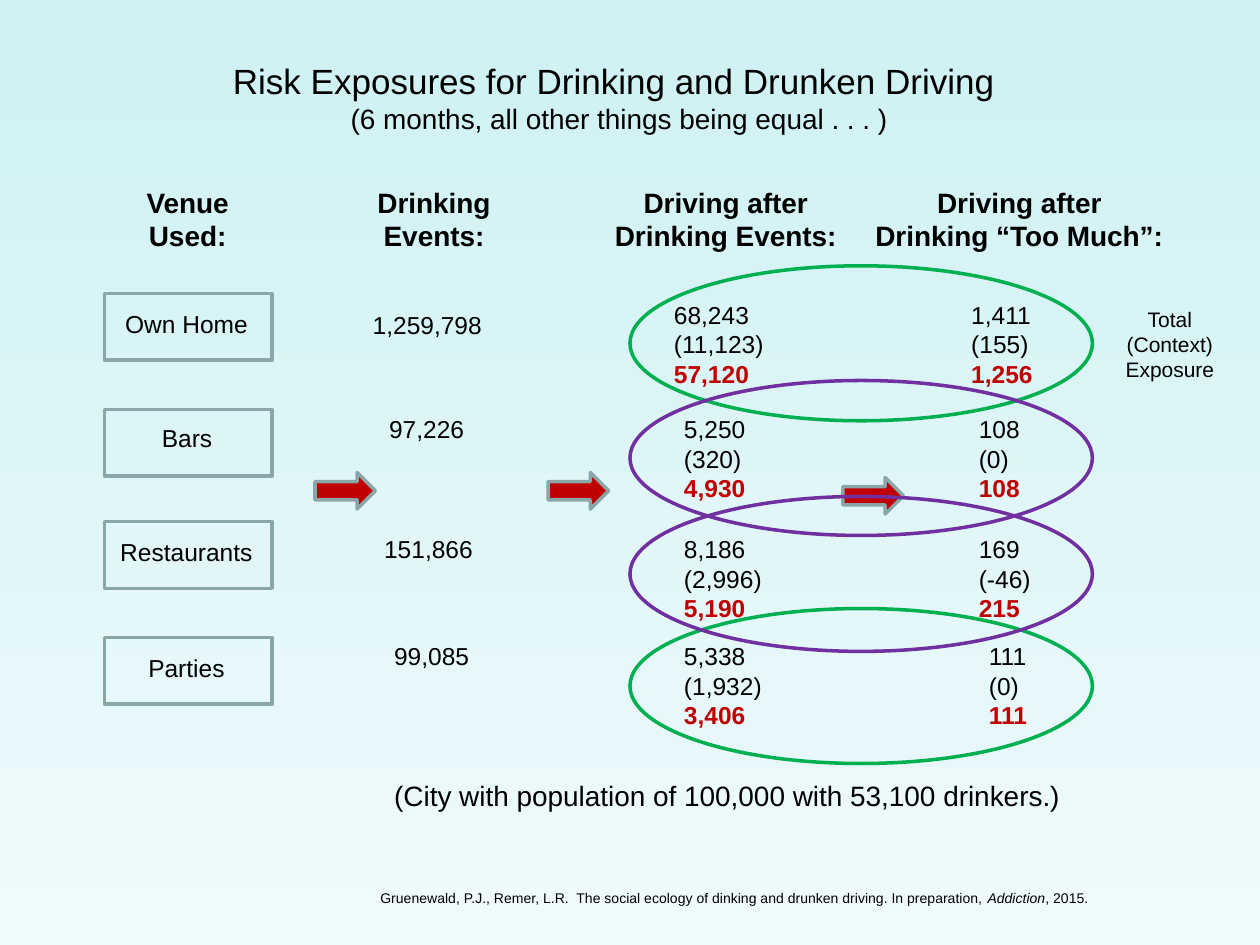
"""Build the slide on risk exposures for drinking and drunken driving."""
from pptx import Presentation
from pptx.dml.color import RGBColor
from pptx.enum.shapes import MSO_SHAPE
from pptx.enum.text import MSO_AUTO_SIZE, PP_ALIGN
from pptx.util import Inches, Pt

RECT, OVAL, ARROW = MSO_SHAPE.RECTANGLE, MSO_SHAPE.OVAL, MSO_SHAPE.RIGHT_ARROW
LEFT, CENTER = PP_ALIGN.LEFT, PP_ALIGN.CENTER
FIT = MSO_AUTO_SIZE.SHAPE_TO_FIT_TEXT
BLACK, RED, GRAY, GREEN, PURPLE = "000000", "C00000", "8AA6A8", "00B050", "7030A0"


def rgb(value):
    return RGBColor.from_string(value)


class Deck:
    def __init__(self):
        self.prs = Presentation()
        self.prs.slide_width, self.prs.slide_height = Inches(10), Inches(7.5)
        self.s = self.prs.slides.add_slide(self.prs.slide_layouts[6])
        self.style = {"name": "Arial", "size": Pt(14), "bold": False, "italic": False}

    def background(self, top, bottom):
        fill = self.s.background.fill
        fill.gradient()
        fill.gradient_angle = 270
        for stop, color in zip(fill.gradient_stops, (top, bottom)):
            stop.color.rgb = rgb(color)

    def run(self, p, text, color=BLACK, **fmt):
        r = p.add_run()
        r.text = text
        r.font.color.rgb = rgb(color)
        for key, value in {**self.style, **fmt}.items():
            setattr(r.font, key, value)

    def text(self, at, paragraphs, align=LEFT, wrap=False, spacing=None, **fmt):
        tf = self.s.shapes.add_textbox(*map(Inches, at)).text_frame
        tf.word_wrap, tf.auto_size = wrap, FIT
        for i, runs in enumerate(paragraphs):
            p = tf.add_paragraph() if i else tf.paragraphs[0]
            p.alignment, p.line_spacing = align, spacing
            for text, extra in [(runs, {})] if isinstance(runs, str) else runs:
                self.run(p, text, **{**fmt, **extra})
        return tf

    def shape(self, kind, at, line, fill=None):
        sp = self.s.shapes.add_shape(kind, *map(Inches, at))
        sp.shadow.inherit = False
        sp.line.color.rgb, sp.line.width = rgb(line), Pt(2)
        if fill:
            sp.fill.solid()
            sp.fill.fore_color.rgb = rgb(fill)
        else:
            sp.fill.background()


def main():
    deck = Deck()
    deck.background("CEF1F4", "EFFAFB")

    title = deck.text((1.75, 0.42, 6.33, 0.71), [
        [("Risk Exposures for Drinking and Drunken Driving", {"size": Pt(20)})],
        "(6 months, all other things being equal . . . )"], wrap=True, size=Pt(16))
    title.paragraphs[1].alignment = CENTER

    headings = [(1.06, 0.86, "Venue", "Used:"),
                (2.89, 1.11, "Drinking", "Events:"),
                (4.77, 1.98, "Driving after", "Drinking Events:"),
                (6.83, 2.52, "Driving after", "Drinking “Too Much”:")]
    for x, w, *lines in headings:
        deck.text((x, 1.42, w, 0.64), lines, CENTER, size=Pt(16), bold=True)

    venues = [("Own Home", 2.33, 0.89, 2.43, 1.18), ("Bars", 3.25, 1.18, 3.33, 0.61),
              ("Restaurants", 4.14, 0.85, 4.24, 1.26), ("Parties", 5.06, 1.07, 5.16, 0.82)]
    for name, box_y, x, y, w in venues:
        deck.shape(RECT, (0.83, box_y, 1.33, 0.53), GRAY)
        deck.text((x, y, w, 0.31), [name], CENTER, spacing=Pt(15))

    events = [(2.86, 2.41, 1.07, "1,259,798"), (2.99, 3.24, 0.8, "97,226"),
              (2.95, 4.19, 0.91, "151,866"), (3.03, 5.04, 0.8, "99,085")]
    for x, y, w, count in events:
        deck.text((x, y, w, 0.34), [count])

    exposures = [(5.25, 2.33, 0.91, "68,243", "(11,123)", "57,120"),
                 (5.33, 3.24, 0.69, "5,250", "(320)", "4,930"),
                 (5.33, 4.19, 0.82, "8,186", "(2,996)", "5,190"),
                 (5.33, 5.04, 0.82, "5,338", "(1,932)", "3,406"),
                 (7.61, 2.33, 0.69, "1,411", "(155)", "1,256"),
                 (7.67, 3.24, 0.53, "108", "(0)", "108"),
                 (7.67, 4.19, 0.61, "169", "(-46)", "215"),
                 (7.75, 5.04, 0.51, "111", "(0)", "111")]
    for x, y, w, total, context, exposure in exposures:
        deck.text((x, y, w, 0.81),
                  [total, context, [(exposure, {"color": RED, "bold": True})]])

    deck.text((3.03, 6.13, 5.55, 0.37),
              ["(City with population of 100,000 with 53,100 drinkers.)"], size=Pt(16))
    deck.text((2.92, 7.01, 6.92, 0.24), [[
        ("Gruenewald, P.J., Remer, L.R.  The social ecology of dinking and drunken driving."
         " In preparation, ", {}),
        ("Addiction", {"italic": True}), (", 2015.", {})]], wrap=True, size=Pt(8))

    for x, y in [(2.5, 3.75), (4.35, 3.75), (6.69, 3.79)]:
        deck.shape(ARROW, (x, y, 0.48, 0.29), GRAY, RED)
    for y, color in [(2.11, GREEN), (4.83, GREEN), (3.02, PURPLE), (3.94, PURPLE)]:
        deck.shape(OVAL, (5, y, 3.67, 1.23), color)

    deck.text((8.83, 2.38, 0.91, 0.71), ["Total", "(Context)", "Exposure"],
              CENTER, size=Pt(12))
    deck.prs.save("out.pptx")


if __name__ == "__main__":
    main()
